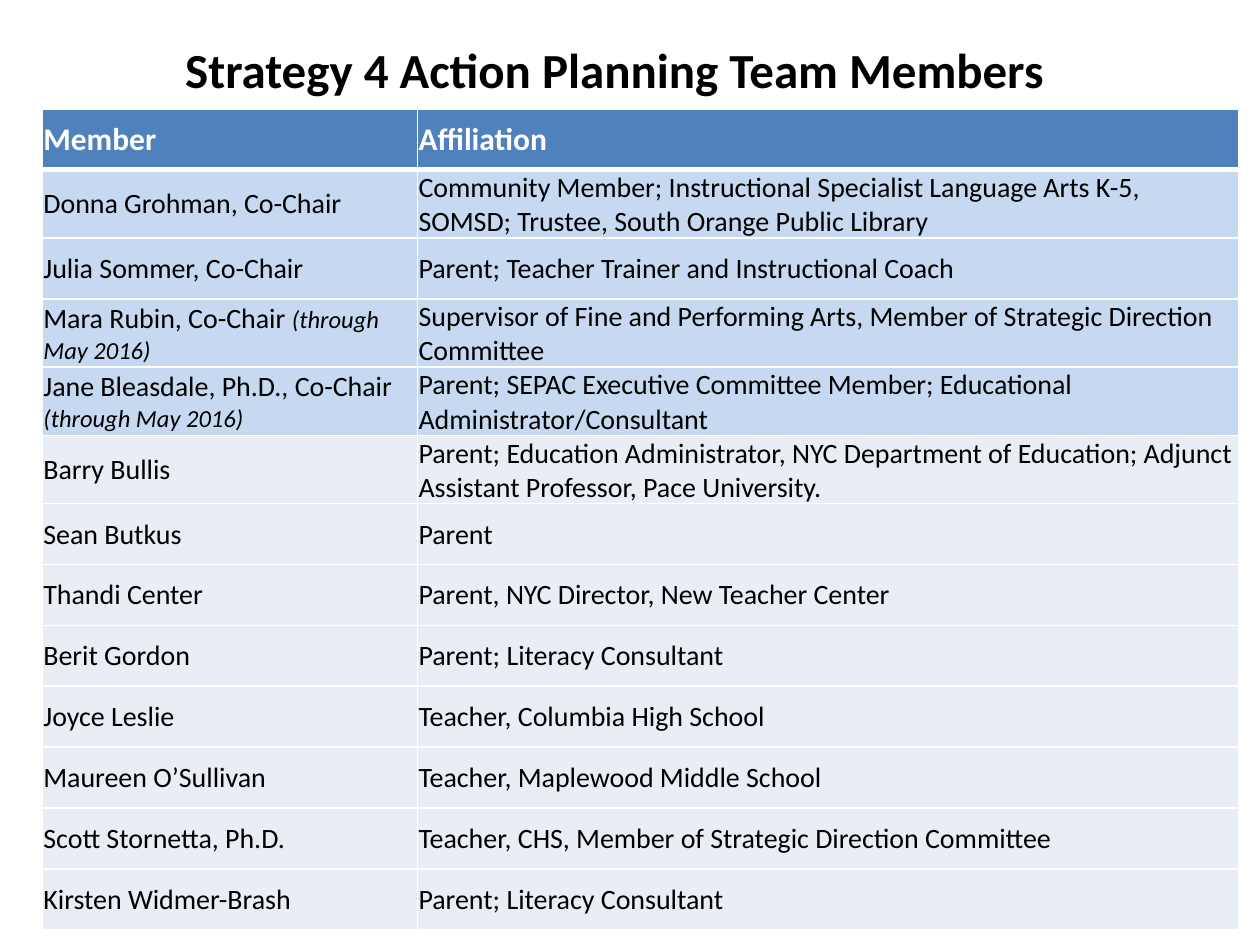
from lxml import etree
from pptx import Presentation
from pptx import util as u
from pptx.dml.color import RGBColor
from pptx.enum import text
from pptx.oxml.ns import qn

COLORS = {"ink": "000000", "white": "FFFFFF", "header": "4F81BD",
          "chair": "C6D9F1", "member": "E9EDF4"}
FONT = "Calibri"
THROUGH = "(through May 2016)"

# Name, note after the name, affiliation; the co-chairs come first
MEMBERS = [
    ("Donna Grohman, Co-Chair", "",
     "Community Member; Instructional Specialist Language Arts K-5, SOMSD; "
     "Trustee, South Orange Public Library"),
    ("Julia Sommer, Co-Chair", "", "Parent; Teacher Trainer and Instructional Coach"),
    ("Mara Rubin, Co-Chair ", THROUGH,
     "Supervisor of Fine and Performing Arts, Member of Strategic Direction Committee"),
    ("Jane Bleasdale, Ph.D., Co-Chair ", THROUGH,
     "Parent; SEPAC Executive Committee Member; Educational Administrator/Consultant"),
    ("Barry Bullis", "",
     "Parent; Education Administrator, NYC Department of Education; "
     "Adjunct Assistant Professor, Pace University."),
    ("Sean Butkus", "", "Parent"),
    ("Thandi Center", "", "Parent, NYC Director, New Teacher Center"),
    ("Berit Gordon", "", "Parent; Literacy Consultant"),
    ("Joyce Leslie", "", "Teacher, Columbia High School"),
    ("Maureen O’Sullivan", "", "Teacher, Maplewood Middle School"),
    ("Scott Stornetta, Ph.D.", "", "Teacher, CHS, Member of Strategic Direction Committee"),
    ("Kirsten Widmer-Brash", "", "Parent; Literacy Consultant"),
]


def add_text(paragraph, words, size=16, color="ink", bold=False, italic=False):
    run = paragraph.add_run()
    run.text = words
    run.font.name = FONT
    run.font.size = u.Pt(size)
    run.font.bold = bold
    run.font.italic = italic
    run.font.color.rgb = RGBColor.from_string(COLORS[color])


class SlideBuilder:
    def __init__(self, slide):
        self.slide = slide

    def title(self, words, left, top, width, height):
        heading = self.slide.shapes.add_textbox(*map(u.Pt, (left, top, width, height)))
        frame = heading.text_frame
        frame.word_wrap = True
        frame.auto_size = text.MSO_AUTO_SIZE.SHAPE_TO_FIT_TEXT
        frame.paragraphs[0].alignment = text.PP_ALIGN.CENTER
        add_text(frame.paragraphs[0], words, size=28, bold=True)

    def table(self, rows, left, top, widths, row_height):
        roster = self.slide.shapes.add_table(
            rows, len(widths), u.Pt(left), u.Pt(top),
            u.Pt(sum(widths)), u.Pt(row_height * rows)).table
        roster.horz_banding = False
        for column, width in zip(roster.columns, widths):
            column.width = u.Pt(width)
        for row in roster.rows:
            row.height = u.Pt(row_height)
        return roster

    def cell(self, cell, fill, runs, top_line=1, bottom_line=1):
        cell.margin_left = cell.margin_right = cell.margin_top = u.Pt(0.6)
        cell.margin_bottom = u.Pt(0)
        cell.vertical_anchor = text.MSO_ANCHOR.MIDDLE
        # Borders come before the fill in the cell properties
        properties = cell._tc.get_or_add_tcPr()
        for side, width in (("L", 1), ("R", 1), ("T", top_line), ("B", bottom_line)):
            line = etree.SubElement(properties, qn(f"a:ln{side}"), w=str(u.Pt(width)))
            paint = etree.SubElement(line, qn("a:solidFill"))
            etree.SubElement(paint, qn("a:srgbClr"), val=COLORS["white"])
        cell.fill.solid()
        cell.fill.fore_color.rgb = RGBColor.from_string(COLORS[fill])
        for words, style in runs:
            add_text(cell.text_frame.paragraphs[0], words, **style)


def main():
    deck = Presentation()
    deck.slide_width, deck.slide_height = u.Pt(720), u.Pt(540)
    page = SlideBuilder(deck.slides.add_slide(deck.slide_layouts[6]))

    page.title("Strategy 4 Action Planning Team Members", 54, 18.8, 594, 41)

    # Roster with its header row
    roster = page.table(len(MEMBERS) + 1, 24.2, 62.2, (214.4, 469.2), 34.8)
    for column, label in enumerate(("Member", "Affiliation")):
        page.cell(roster.cell(0, column), "header",
                  [(label, dict(size=18, color="white", bold=True))], bottom_line=3)

    # One row per member, co-chairs in a stronger tint
    for row, (name, note, affiliation) in enumerate(MEMBERS, start=1):
        fill = "chair" if "Co-Chair" in name else "member"
        top_line = 3 if row == 1 else 1
        name_runs = [(name, {})]
        if note:
            name_runs.append((note, dict(size=14, italic=True)))
        page.cell(roster.cell(row, 0), fill, name_runs, top_line)
        page.cell(roster.cell(row, 1), fill, [(affiliation, {})], top_line)

    deck.save("out.pptx")


if __name__ == "__main__":
    main()
